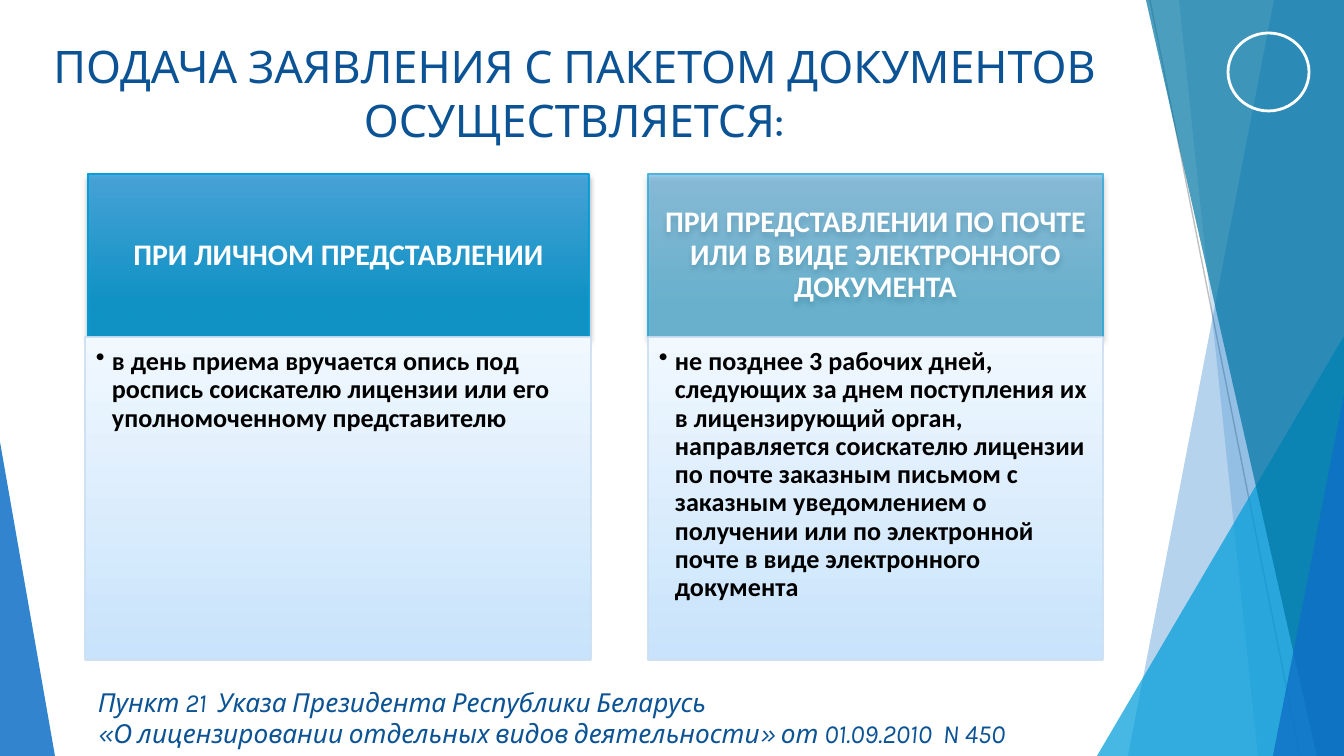
from lxml.etree import SubElement
from pptx import Presentation
from pptx.dml.color import RGBColor
from pptx.enum.shapes import MSO_CONNECTOR as CONNECTOR, MSO_SHAPE as SHAPE
from pptx.enum.text import MSO_ANCHOR as ANCHOR, PP_ALIGN as ALIGN
from pptx.oxml.ns import qn
from pptx.util import Emu, Pt

EMU_PER_PX = 914400 / 134.4
WIDTH, HEIGHT = 1344, 756
HEADER_TOP, HEADER_HEIGHT = 174, 163
BODY_TOP, BODY_HEIGHT = 337, 323

COLORS = {
    "text": "0B5394", "blue": "0F6FC6", "cyan": "009DD9", "teal": "0076A3",
    "white": "FFFFFF", "black": "000000", "gray": "BFBFBF",
    "header_top": "3FA2DB", "header_bottom": "0090C7",
    "body_top": "F1F8FE", "body_bottom": "C8E3FB", "body_line": "CCDFF1",
}

FACETS = [  # corner points, color, opacity
    ([(1274, 0), (WIDTH, 0), (WIDTH, HEIGHT), (1128, HEIGHT)], "blue", 30),
    ([(1179, 0), (WIDTH, 0), (WIDTH, HEIGHT), (1258, HEIGHT)], "blue", 20),
    ([(1146, 0), (WIDTH, 0), (WIDTH, HEIGHT), (1317, HEIGHT)], "teal", 70),
]
TRIANGLES = [  # box, position of the tip, color, opacity
    ((1097, 336, 247, 420), 1, "cyan", 72),
    ((1273, 395, 71, 361), 1, "blue", 80),
    ((0, 442, 55, 314), 0, "blue", 85),
]
COLUMNS = [  # header left and width, body left and width, opacity, texts
    (88, 501, 85, 506, 90, "ПРИ ЛИЧНОМ ПРЕДСТАВЛЕНИИ",
     "в день приема вручается опись под роспись соискателю лицензии или его "
     "уполномоченному представителю"),
    (648, 455, 648, 455, 50,
     "ПРИ ПРЕДСТАВЛЕНИИ ПО ПОЧТЕ ИЛИ В ВИДЕ ЭЛЕКТРОННОГО ДОКУМЕНТА",
     "не позднее 3 рабочих дней, следующих за днем поступления их в "
     "лицензирующий орган, направляется соискателю лицензии по почте заказным "
     "письмом с заказным уведомлением о получении или по электронной почте "
     "в виде электронного документа"),
]


def px(value):
    return Emu(round(value * EMU_PER_PX))


def rgb(name):
    return RGBColor.from_string(COLORS[name])


def set_opacity(element, percent):
    """Make every color inside the element partly transparent."""
    for color in element.iter(qn("a:srgbClr")):
        SubElement(color, qn("a:alpha"), val=str(percent * 1000))


def set_line(shape, color, width):
    shape.line.color.rgb = rgb(color)
    shape.line.width = Pt(width)


def set_solid(shape, color, opacity):
    shape.shadow.inherit = False
    shape.fill.solid()
    shape.fill.fore_color.rgb = rgb(color)
    shape.line.fill.background()
    set_opacity(shape.element.spPr, opacity)


def set_gradient(shape, top, bottom, end):
    shape.fill.gradient()
    shape.fill.gradient_angle = 270
    for stop, color, position in zip(shape.fill.gradient_stops, (top, bottom), (0, end)):
        stop.color.rgb = rgb(color)
        stop.position = position


def add_shape(slide, kind, box):
    shape = slide.shapes.add_shape(kind, *map(px, box))
    shape.shadow.inherit = False
    return shape


def add_drop_shadow(shape):
    effects = shape.element.spPr.find(qn("a:effectLst"))
    shadow = SubElement(effects, qn("a:outerShdw"), blurRad=str(Pt(3)), dist=str(Pt(2)),
                        dir="5400000", rotWithShape="0")
    SubElement(shadow, qn("a:srgbClr"), val=COLORS["black"])
    set_opacity(shadow, 35)


def add_bullet(paragraph, indent):
    properties = paragraph._p.get_or_add_pPr()
    properties.set("marL", str(px(indent)))
    properties.set("indent", str(px(-indent)))
    SubElement(properties, qn("a:buChar"), char="•")


def set_text(shape, *lines, size, color="text", font="Karla", bold=False, italic=False,
             align=ALIGN.LEFT, anchor=ANCHOR.TOP, insets=(13, 7, 13, 7), spacing=None,
             bullet_indent=None):
    frame = shape.text_frame
    frame.word_wrap = True
    frame.vertical_anchor = anchor
    (frame.margin_left, frame.margin_top,
     frame.margin_right, frame.margin_bottom) = map(px, insets)
    for index, line in enumerate(lines):
        paragraph = frame.add_paragraph() if index else frame.paragraphs[0]
        paragraph.alignment = align
        if spacing:
            paragraph.line_spacing = spacing
        if bullet_indent:
            add_bullet(paragraph, bullet_indent)
        run = paragraph.add_run()
        run.text = line
        run.font.name, run.font.size = font, Pt(size)
        run.font.bold, run.font.italic = bold, italic
        run.font.color.rgb = rgb(color)


def add_backdrop(slide):
    edge = slide.shapes.add_connector(CONNECTOR.STRAIGHT, px(1150), 0, px(1300), px(HEIGHT))
    set_line(edge, "gray", 0.75)
    SubElement(edge.element.spPr, qn("a:effectLst"))

    def add_facet(points, color, opacity):
        builder = slide.shapes.build_freeform(*points[0], scale=EMU_PER_PX)
        builder.add_line_segments(points[1:], close=True)
        set_solid(builder.convert_to_shape(), color, opacity)

    def add_triangle(box, tip, color, opacity):
        triangle = add_shape(slide, SHAPE.ISOSCELES_TRIANGLE, box)
        triangle.adjustments[0] = tip
        set_solid(triangle, color, opacity)

    for facet in FACETS[:2]:
        add_facet(*facet)
    add_triangle(*TRIANGLES[0])
    add_facet(*FACETS[2])
    for triangle in TRIANGLES[1:]:
        add_triangle(*triangle)

    ring = add_shape(slide, SHAPE.OVAL, (1228, 33, 81, 78))
    ring.fill.background()
    set_line(ring, "white", 1.5)


def add_column(slide, header_left, header_width, body_left, body_width, opacity, title, text):
    header = add_shape(slide, SHAPE.RECTANGLE,
                       (header_left, HEADER_TOP, header_width, HEADER_HEIGHT))
    set_gradient(header, "header_top", "header_bottom", 0.78)
    set_line(header, "cyan", 1)
    set_opacity(header.element.spPr, opacity)
    add_drop_shadow(header)
    set_text(header, title, size=16, color="white", font="Calibri", bold=True,
             align=ALIGN.CENTER, anchor=ANCHOR.MIDDLE, insets=(16, 9, 16, 9), spacing=0.9)

    body = add_shape(slide, SHAPE.RECTANGLE, (body_left, BODY_TOP, body_width, BODY_HEIGHT))
    set_gradient(body, "body_top", "body_bottom", 1)
    set_line(body, "body_line", 1)
    set_opacity(body.element.spPr.find(qn("a:ln")), 90)
    set_text(body, text, size=14, color="black", font="Calibri", bold=True,
             insets=(11, 11, 15, 16), spacing=0.9, bullet_indent=16)


def main():
    presentation = Presentation()
    presentation.slide_width, presentation.slide_height = px(WIDTH), px(HEIGHT)
    slide = presentation.slides.add_slide(presentation.slide_layouts[6])

    add_backdrop(slide)
    title = slide.shapes.add_textbox(*map(px, (0, 32, 1149, 122)))
    set_text(title, "ПОДАЧА ЗАЯВЛЕНИЯ С ПАКЕТОМ ДОКУМЕНТОВ ОСУЩЕСТВЛЯЕТСЯ:",
             size=24, align=ALIGN.CENTER)
    source = slide.shapes.add_textbox(*map(px, (85, 679, 1137, 77)))
    set_text(source, "Пункт 21  Указа Президента Республики Беларусь",
             "«О лицензировании отдельных видов деятельности» от 01.09.2010  N 450",
             size=14, italic=True)
    for column in COLUMNS:
        add_column(slide, *column)

    presentation.save("out.pptx")


if __name__ == "__main__":
    main()
